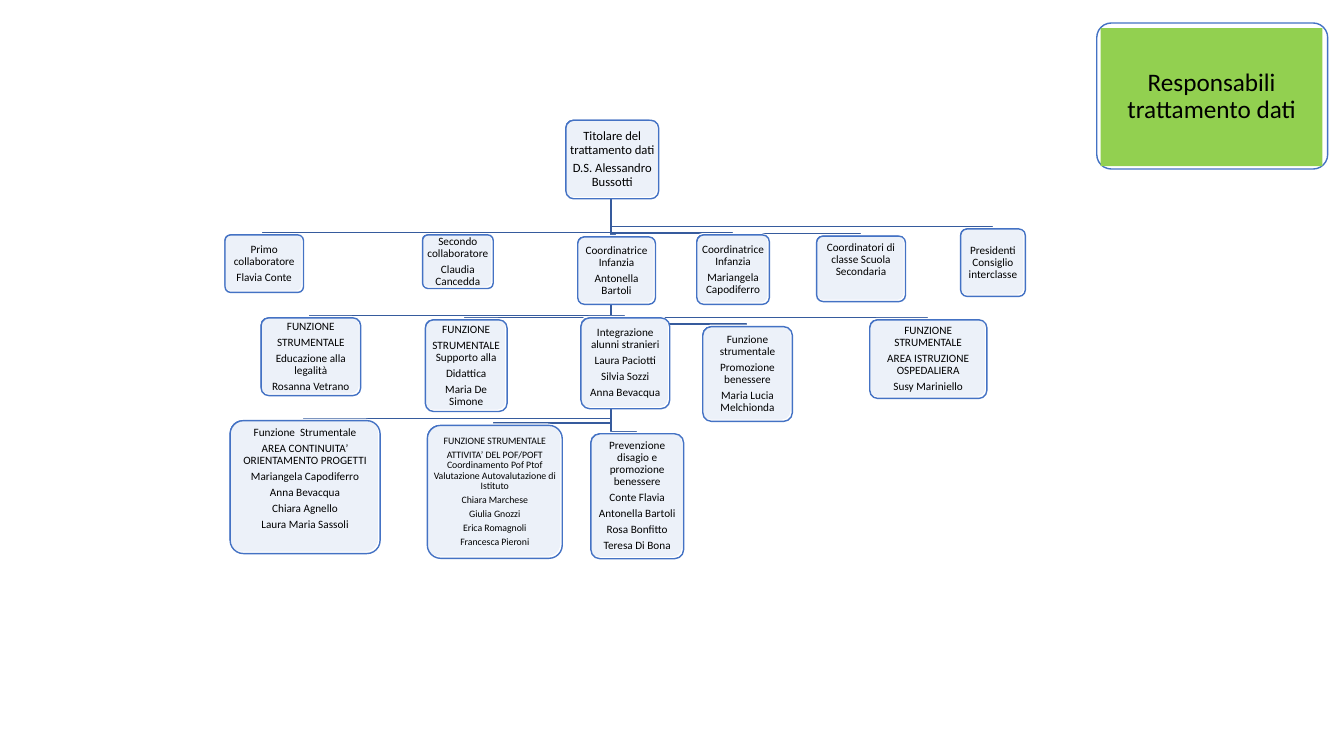
from lxml import etree
from pptx import Presentation
from pptx import util as u
from pptx.dml.color import RGBColor
from pptx.enum import shapes, text
from pptx.oxml import ns

BLUE = RGBColor(0x44, 0x72, 0xC4)
NAVY = RGBColor(0x36, 0x5B, 0x9D)
GREEN = RGBColor(0x92, 0xD0, 0x50)
WHITE = RGBColor(0xFF, 0xFF, 0xFF)
BLACK = RGBColor(0, 0, 0)

ROUND = shapes.MSO_SHAPE.ROUNDED_RECTANGLE
RECT = shapes.MSO_SHAPE.RECTANGLE
STEP = 0.03  # offset of a card's front sheet, and length of a branch's last drop
BLANK = 0.43  # one empty 8 pt line below the text

# left, top, width, height in cm; paragraphs; text format
HEAD = ((14.23, 3, 2.34, 1.98),
        ["Titolare del trattamento dati", "D.S. Alessandro Bussotti"],
        {"size": 9, "pad": 0.1})
STAFF = [
    ((5.64, 5.89, 1.98, 1.45), ["Primo collaboratore", "Flavia Conte"], {}),
    ((20.55, 5.92, 2.24, 1.65),
     ["Coordinatori di classe Scuola Secondaria"], {"below": BLANK}),
    ((24.18, 5.74, 1.63, 1.7), ["Presidenti Consiglio interclasse"], {}),
    ((10.62, 5.89, 1.78, 1.35),
     ["Secondo collaboratore", "Claudia Cancedda"], {}),
    ((14.53, 5.94, 1.96, 1.7),
     ["Coordinatrice Infanzia", "Antonella Bartoli"], {}),
    ((17.53, 5.89, 1.83, 1.75),
     ["Coordinatrice Infanzia", "Mariangela Capodiferro"], {}),
    ((6.55, 7.98, 2.51, 1.96),
     ["FUNZIONE", "STRUMENTALE", "Educazione alla legalità",
      "Rosanna Vetrano"], {}),
    ((10.69, 8.03, 2.06, 2.31),
     ["FUNZIONE", "STRUMENTALE Supporto alla", "Didattica",
      "Maria De Simone"], {}),
    ((17.68, 8.2, 2.26, 2.39),
     ["Funzione strumentale", "Promozione benessere",
      "Maria Lucia Melchionda"], {}),
    ((14.86, 10.9, 2.34, 3.15),
     ["Prevenzione disagio e promozione benessere", "Conte Flavia",
      "Antonella Bartoli", "Rosa Bonfitto", "Teresa Di Bona"], {}),
    ((14.61, 7.98, 2.24, 2.29),
     ["Integrazione alunni stranieri", "Laura Paciotti", "Silvia Sozzi",
      "Anna Bevacqua"], {}),
    ((21.89, 8.03, 2.95, 1.98),
     ["FUNZIONE STRUMENTALE", "AREA ISTRUZIONE OSPEDALIERA",
      "Susy Mariniello"], {}),
    ((10.74, 10.69, 3.4, 3.35),
     ["FUNZIONE STRUMENTALE",
      "ATTIVITA’ DEL POF/POFT Coordinamento Pof Ptof "
      "Valutazione Autovalutazione di Istituto",
      "Chiara Marchese", "Giulia Gnozzi", "Erica Romagnoli",
      "Francesca Pieroni"], {"size": 7}),
    ((5.77, 10.57, 3.78, 3.35),
     ["Funzione  Strumentale", "AREA CONTINUITA’ ORIENTAMENTO PROGETTI",
      "Mariangela Capodiferro", "Anna Bevacqua", "Chiara Agnello",
      "Laura Maria Sassoli"], {"below": BLANK}),
]


def write(shape, lines, size=8, pad=0.08, below=0.0, font="Calibri"):
    frame = shape.text_frame
    frame.word_wrap = True
    frame.vertical_anchor = text.MSO_ANCHOR.MIDDLE
    frame.margin_left = frame.margin_right = frame.margin_top = u.Cm(pad)
    frame.margin_bottom = u.Cm(pad + below)
    for i, line in enumerate(lines):
        para = frame.add_paragraph() if i else frame.paragraphs[0]
        para.alignment = text.PP_ALIGN.CENTER
        para.line_spacing = 0.9
        para.space_after = u.Pt(0.35 * size)
        run = para.add_run()
        run.text = line
        run.font.size = u.Pt(size)
        run.font.name = font
        run.font.color.rgb = BLACK


class Chart:
    """Draws the parts of the organisation chart on one slide."""

    def __init__(self, slide, edge=1, veil=90):
        self.slide = slide
        self.edge = u.Pt(edge)
        self.veil = veil

    def box(self, kind, area, fill, line=None):
        shape = self.slide.shapes.add_shape(kind, *map(u.Cm, area))
        shape.shadow.inherit = False
        shape.fill.solid()
        shape.fill.fore_color.rgb = fill
        if kind == ROUND:
            shape.adjustments[0] = 0.1
        if line is None:
            shape.line.fill.background()
        else:
            shape.line.color.rgb = line
            shape.line.width = self.edge
        return shape

    def sheet(self, area):
        """Add a see-through white box with a blue edge."""
        shape = self.box(ROUND, area, WHITE, BLUE)
        tint = shape.fill._xPr.find(".//" + ns.qn("a:srgbClr"))
        etree.SubElement(tint, ns.qn("a:alpha"), val=str(self.veil * 1000))
        return shape

    def card(self, area, lines, look):
        left, top, width, height = area
        self.box(ROUND, area, BLUE, WHITE)
        front = self.sheet((left + STEP, top + STEP, width, height))
        # the rounded corners already inset the text a little
        curve = 0.03 * min(width, height)
        pad = max(0, look.get("pad", 0.08) - curve)
        write(front, lines, **{**look, "pad": pad})

    def branch(self, head, child):
        """Link the bottom of the head box to the top of a child box."""
        stem, foot = head[0] + head[2] / 2, head[1] + head[3]
        mid, top = child[0] + child[2] / 2, child[1]
        turn = top - STEP
        route = [(stem, foot), (stem, turn), (mid, turn), (mid, top)]
        first, *rest = [(u.Cm(x), u.Cm(y)) for x, y in route]
        pen = self.slide.shapes.build_freeform(*first)
        pen.add_line_segments(rest, close=False)
        shape = pen.convert_to_shape()
        shape.shadow.inherit = False
        shape.fill.background()
        shape.line.color.rgb = NAVY
        shape.line.width = self.edge


def main():
    deck = Presentation()
    deck.slide_width, deck.slide_height = u.Cm(33.87), u.Cm(19.05)
    chart = Chart(deck.slides.add_slide(deck.slide_layouts[6]))
    for area, _, _ in STAFF:
        chart.branch(HEAD[0], area)
    for card in [HEAD, *STAFF]:
        chart.card(*card)
    chart.sheet((27.64, 0.58, 5.82, 3.68))
    title = chart.box(RECT, (27.74, 0.71, 5.59, 3.48), GREEN)
    write(title, ["Responsabili trattamento dati"], size=18, pad=0.18)
    deck.save("out.pptx")


if __name__ == "__main__":
    main()
